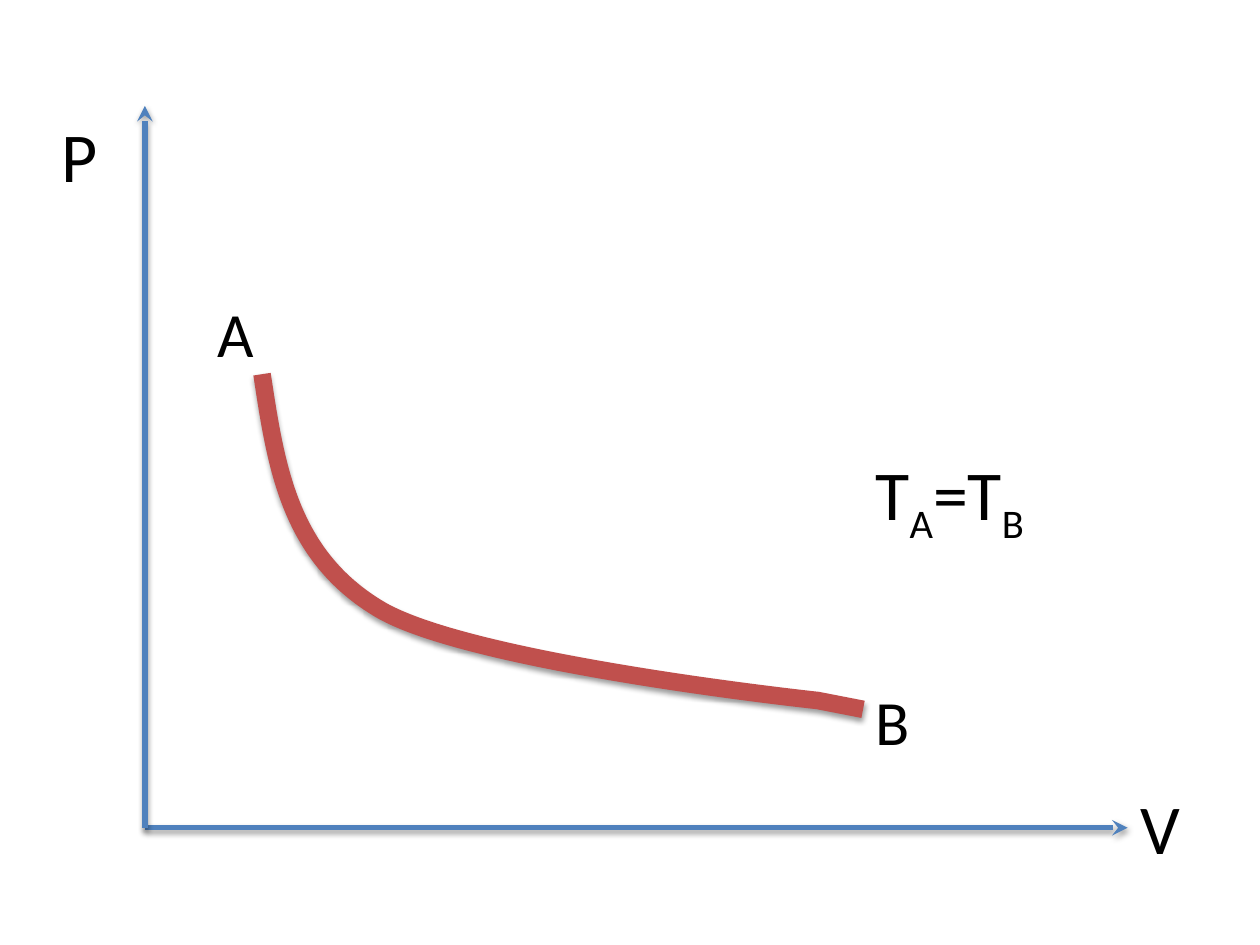
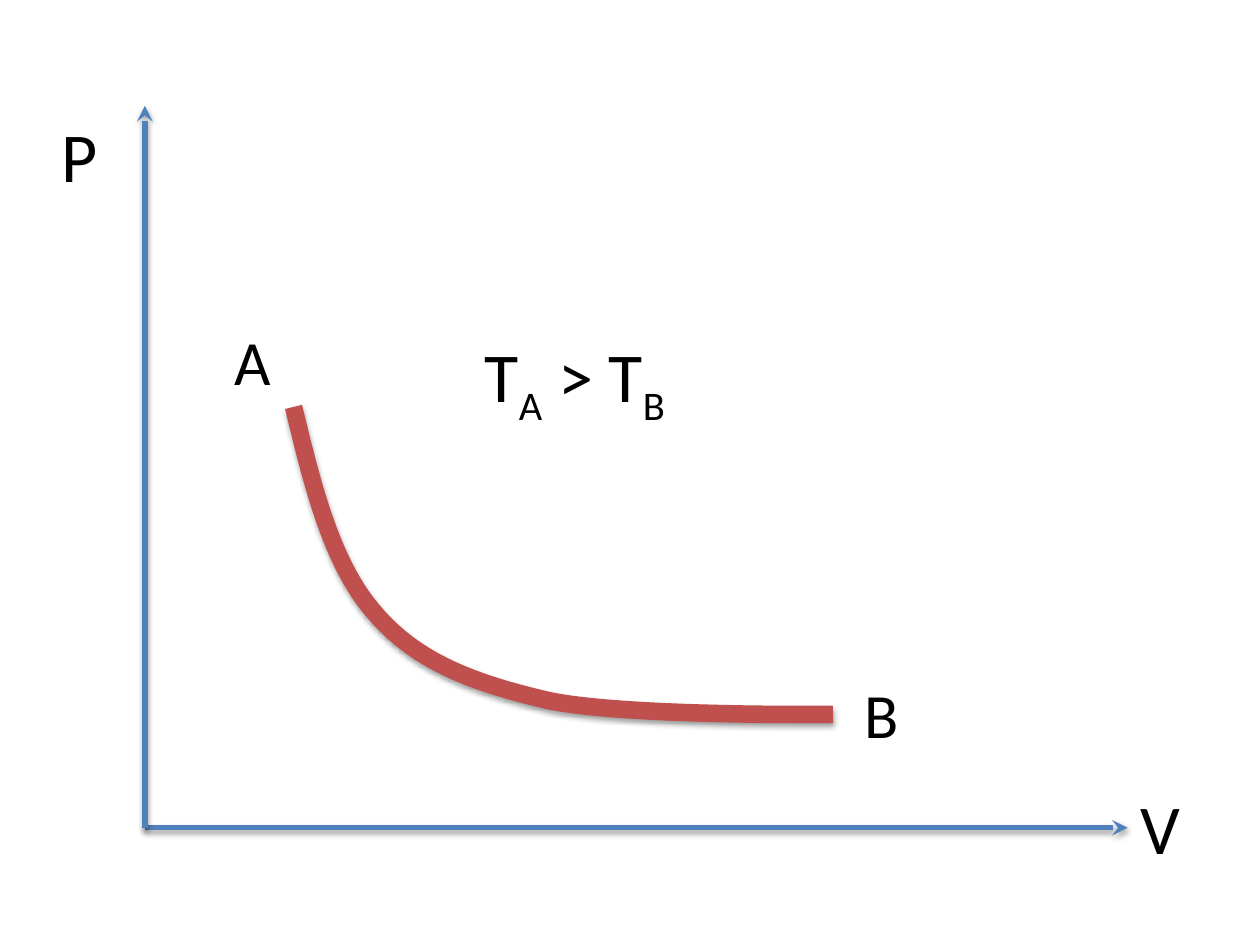
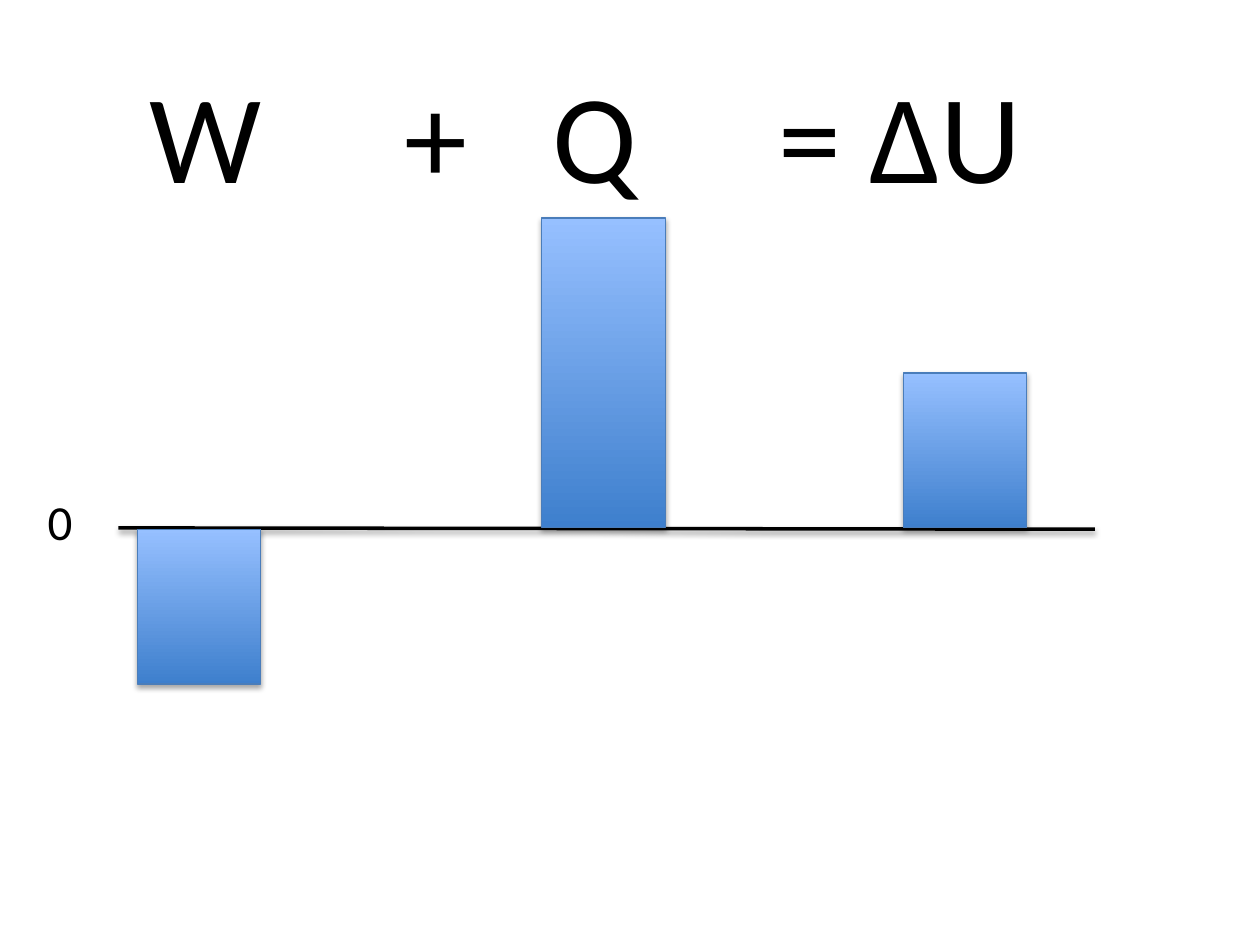
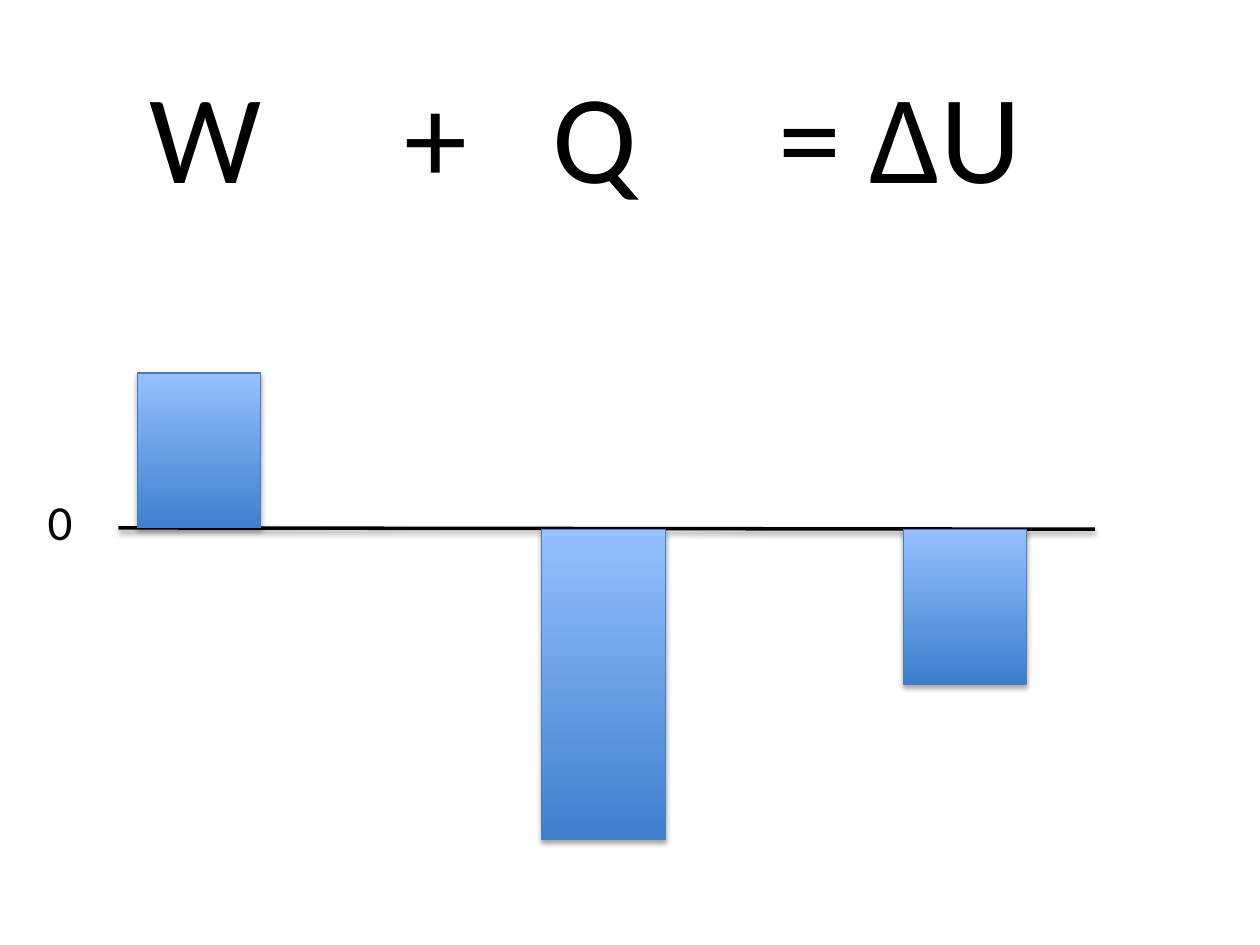
from lxml import etree
from pptx import Presentation
from pptx.dml.color import RGBColor
from pptx.enum.shapes import MSO_CONNECTOR, MSO_SHAPE
from pptx.oxml.ns import qn
from pptx.util import Inches, Pt

STRAIGHT = MSO_CONNECTOR.STRAIGHT
RECTANGLE = MSO_SHAPE.RECTANGLE

FONT = "Calibri"
COLORS = {
    "text": "000000",
    "axis": "4F81BD",
    "curve": "C0504D",
    "zero": "000000",
    "bar_bottom": "3E7FCD",
    "bar_top": "96C0FF",
    "bar_line": "4A7DBA",
    "shadow": "000000",
}

# Text is a list of (characters, is_subscript); boxes are left, top, width, height.
# Curve points: the start, three points for each Bézier piece, then any straight end.
PV_SLIDES = [
    {
        "curve": [(2.08, 2.97),
                  (2.19, 3.69), (2.29, 4.41), (3.02, 4.84),
                  (3.76, 5.27), (6.49, 5.56), (6.49, 5.56),
                  (6.85, 5.63)],
        "labels": [
            ([("T", False), ("A", True), ("=T", False), ("B", True)],
             (6.85, 3.53, 1.71, 0.77), 40),
            ([("A", False)], (1.63, 2.29, 1.18, 0.71), 36),
            ([("B", False)], (6.85, 5.37, 1.2, 0.71), 36),
        ],
    },
    {
        "curve": [(2.33, 3.23),
                  (2.48, 3.85), (2.63, 4.47), (2.97, 4.86),
                  (3.3, 5.25), (3.75, 5.42), (4.35, 5.56),
                  (4.96, 5.69), (6.61, 5.67), (6.61, 5.67)],
        "labels": [
            ([("A", False)], (1.76, 2.51, 0.99, 0.71), 36),
            ([("B", False)], (6.76, 5.31, 1.6, 0.71), 36),
            ([("T", False), ("A", True), (" > T", False), ("B", True)],
             (3.75, 2.59, 3, 0.77), 40),
        ],
    },
]
ORIGIN = (1.15, 6.57)
AXES = [
    {"end": (8.95, 6.57), "name": "V", "box": (8.95, 6.18, 0.94, 0.77)},
    {"end": (1.15, 0.84), "name": "P", "box": (0.39, 0.84, 0.75, 0.77)},
]

EQUATION = "W\t+\tQ\t= ΔU"
EQUATION_BOX = (1.09, 0.41, 8.45, 1.31)
EQUATION_TABS = (2.02, 3.2, 4.99)
ENERGY_SLIDES = [(-1, 2, 1), (1, -2, -1)]  # W, Q and ΔU in bar units
BAR_LEFTS = (1.09, 4.3, 7.17)
BAR_WIDTH, BAR_UNIT = 0.98, 1.23
ZERO_START, ZERO_END = (0.94, 4.19), (8.69, 4.2)
ZERO_BOX = (0.28, 3.85, 0.47, 0.57)


def inches(values):
    return [Inches(v) for v in values]


def rgb(name):
    return RGBColor.from_string(COLORS[name])


def set_line(shape, color, width):
    shape.line.color.rgb = rgb(color)
    shape.line.width = Pt(width)


def add_shadow(shape, opacity=38, dist=1.6):
    """Append a soft downward shadow; fill and line must be set before."""
    effects = etree.SubElement(shape._element.spPr, qn("a:effectLst"))
    outer = etree.SubElement(effects, qn("a:outerShdw"), blurRad=str(Pt(3.1)),
                             dist=str(Pt(dist)), dir="5400000", rotWithShape="0")
    clr = etree.SubElement(outer, qn("a:srgbClr"), val=COLORS["shadow"])
    etree.SubElement(clr, qn("a:alpha"), val=str(opacity * 1000))


def add_text(shapes, parts, box, size):
    tf = shapes.add_textbox(*inches(box)).text_frame
    tf.word_wrap = True
    p = tf.paragraphs[0]
    for text, subscript in parts:
        r = p.add_run()
        r.text = text
        r.font.name, r.font.size = FONT, Pt(size)
        r.font.color.rgb = rgb("text")
        if subscript:
            r._r.get_or_add_rPr().set("baseline", "-25000")
    return p


def add_line(shapes, start, end, color, width, arrow=False):
    line = shapes.add_connector(STRAIGHT, *inches(start + end))
    set_line(line, color, width)
    if arrow:
        etree.SubElement(line.line._get_or_add_ln(), qn("a:tailEnd"), type="stealth")
    add_shadow(line)


def add_curve(shapes, points):
    start, *rest = [inches(pt) for pt in points]
    builder = shapes.build_freeform(*start)
    builder.add_line_segments(rest, close=False)
    sp = builder.convert_to_shape()

    # Merge each full set of three straight segments into one Bézier piece.
    segments = list(sp._element.iter(qn("a:lnTo")))
    for i in range(0, len(segments) - 2, 3):
        first, *others = segments[i:i + 3]
        piece = etree.Element(qn("a:cubicBezTo"))
        first.addprevious(piece)
        for segment in (first, *others):
            piece.append(segment[0])
            segment.getparent().remove(segment)

    sp.fill.background()
    set_line(sp, "curve", 10)
    add_shadow(sp)


def add_axes(slide):
    shapes = slide.shapes.add_group_shape().shapes
    for axis in AXES:
        add_line(shapes, ORIGIN, axis["end"], "axis", 3, arrow=True)
        add_text(shapes, [(axis["name"], False)], axis["box"], 40)


def add_equation(shapes):
    p = add_text(shapes, [(EQUATION, False)], EQUATION_BOX, 72)
    tabs = etree.SubElement(p._p.get_or_add_pPr(), qn("a:tabLst"))
    for pos in EQUATION_TABS:
        etree.SubElement(tabs, qn("a:tab"), pos=str(Inches(pos)), algn="l")


def add_bar(shapes, left, value):
    height = abs(value) * BAR_UNIT
    top = ZERO_START[1] - height if value > 0 else ZERO_END[1]
    sp = shapes.add_shape(RECTANGLE, *inches((left, top, BAR_WIDTH, height)))
    sp.fill.gradient()
    sp.fill.gradient_angle = 90
    for stop, color in zip(sp.fill.gradient_stops, ("bar_bottom", "bar_top")):
        stop.color.rgb = rgb(color)
    set_line(sp, "bar_line", 0.75)
    add_shadow(sp, opacity=35, dist=1.8)


def main():
    prs = Presentation()
    prs.slide_width, prs.slide_height = inches((10, 7.5))
    blank = prs.slide_layouts[6]

    for content in PV_SLIDES:
        slide = prs.slides.add_slide(blank)
        add_curve(slide.shapes, content["curve"])
        for parts, box, size in content["labels"]:
            add_text(slide.shapes, parts, box, size)
        add_axes(slide)

    for values in ENERGY_SLIDES:
        shapes = prs.slides.add_slide(blank).shapes
        add_equation(shapes)
        add_line(shapes, ZERO_START, ZERO_END, "zero", 2)
        add_text(shapes, [("0", False)], ZERO_BOX, 28)
        for left, value in zip(BAR_LEFTS, values):
            add_bar(shapes, left, value)

    prs.save("out.pptx")


if __name__ == "__main__":
    main()
